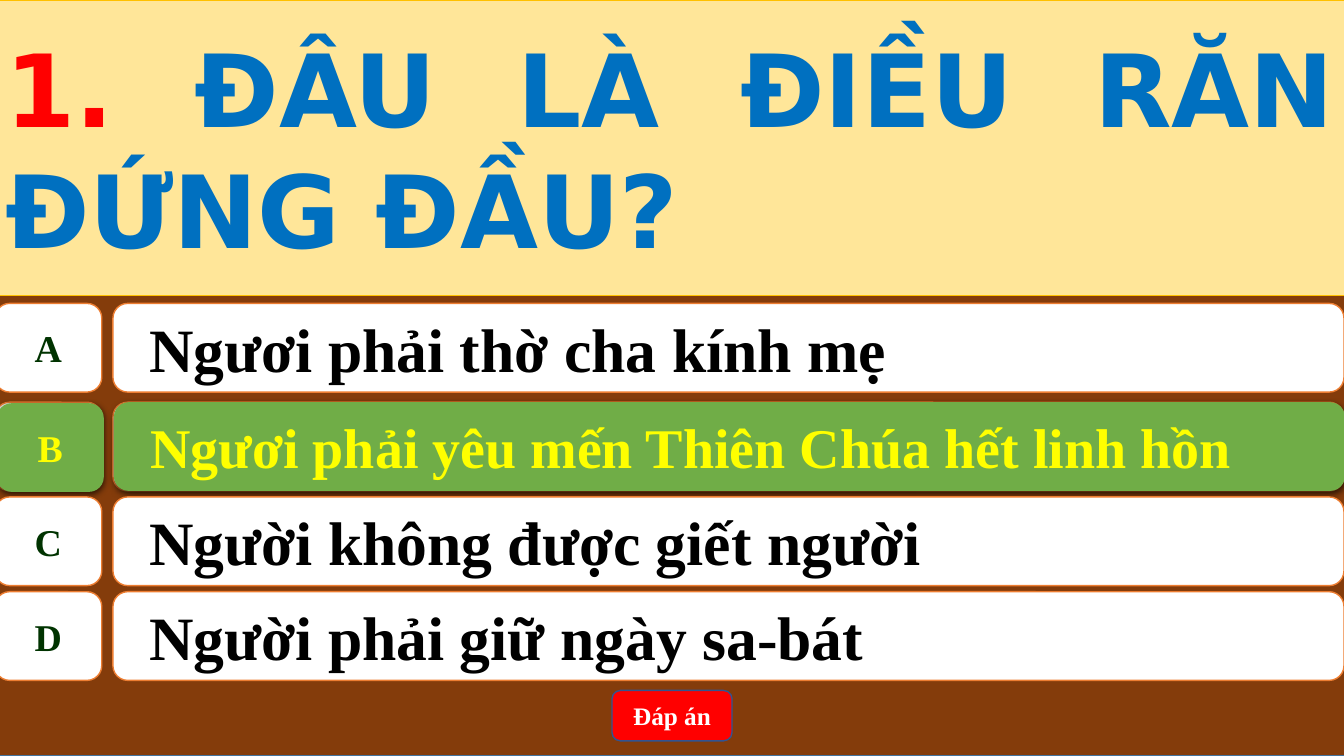
from dataclasses import dataclass

from lxml import etree
from pptx import Presentation
from pptx.dml.color import RGBColor
from pptx.enum import shapes, text
from pptx.oxml import ns
from pptx.util import Emu, Pt

PX = 9144  # 100 px to the inch

WHITE = RGBColor(0xFF, 0xFF, 0xFF)
BLACK = RGBColor(0, 0, 0)
BROWN = RGBColor(0x84, 0x3C, 0x0B)
STEEL = RGBColor(0x43, 0x73, 0x9E)
NAVY = RGBColor(0x32, 0x54, 0x91)
ORANGE = RGBColor(0xED, 0x7D, 0x31)
FOREST = RGBColor(0, 0x33, 0)
GREEN = RGBColor(0x70, 0xAD, 0x47)
YELLOW = RGBColor(0xFF, 0xFF, 0)
RED = RGBColor(0xFF, 0, 0)
BLUE = RGBColor(0, 0x70, 0xC0)
CREAM = RGBColor(0xFF, 0xE6, 0x99)
GOLD = RGBColor(0xFF, 0xC0, 0)

SERIF = "Times New Roman"
SANS = "DejaVu Sans"
KIND = shapes.MSO_SHAPE
ALIGN = text.PP_ALIGN


@dataclass
class Row:
    top: int
    mark: str
    words: str
    size: int = 44
    right: bool = False


ROWS = [
    Row(301, "A", "Ngươi phải thờ cha kính mẹ"),
    Row(399, "B", "Ngươi phải yêu mến Thiên Chúa hết linh hồn", 40, True),
    Row(493, "C", "Người không được giết người"),
    Row(587, "D", "Người phải giữ ngày sa-bát"),
]


def px(count: int) -> Emu:
    return Emu(count * PX)


def paint(shape, fill: RGBColor, line: RGBColor | None, width: float = 1) -> None:
    shape.fill.solid()
    shape.fill.fore_color.rgb = fill
    if line is None:
        shape.line.fill.background()
    else:
        shape.line.color.rgb = line
        shape.line.width = Pt(width)


def add_box(slide, kind, left: int, top: int, wide: int, high: int,
            fill: RGBColor, line: RGBColor | None):
    box = slide.shapes.add_shape(kind, px(left), px(top), px(wide), px(high))
    box.shadow.inherit = False
    paint(box, fill, line)
    box.text_frame.vertical_anchor = text.MSO_ANCHOR.MIDDLE
    return box


def add_run(para, words: str, size: int, color: RGBColor, face: str = SERIF) -> None:
    run = para.add_run()
    run.text = words
    run.font.size = Pt(size)
    run.font.name = face
    run.font.bold = True
    run.font.color.rgb = color


def add_shade(shape) -> None:
    list_ = shape._element.spPr.find(ns.qn("a:effectLst"))
    outer = etree.SubElement(list_, ns.qn("a:outerShdw"), blurRad=str(Pt(4.5)),
                             dist=str(Pt(1.5)), dir="5400000", rotWithShape="0")
    tint = etree.SubElement(outer, ns.qn("a:srgbClr"), val=str(BLACK))
    etree.SubElement(tint, ns.qn("a:alpha"), val="63000")


def add_pair(slide, top: int, shift: int, fill: RGBColor, line: RGBColor | None):
    mark = add_box(slide, KIND.FLOWCHART_ALTERNATE_PROCESS,
                   -5 + 2 * shift, top + shift, 106, 88, fill, line)
    bar = add_box(slide, KIND.ROUNDED_RECTANGLE,
                  112 + shift, top, 1221, 88, fill, line)
    return mark, bar


def add_row(slide, row: Row) -> None:
    mark, bar = add_pair(slide, row.top, 0, WHITE, ORANGE)
    if row.right:
        # The right answer lies over its white row, slightly shifted
        mark, bar = add_pair(slide, row.top, 1, GREEN, None)
        add_shade(mark)
        add_shade(bar)
    mark.text_frame.word_wrap = False
    para = mark.text_frame.paragraphs[0]
    para.alignment = ALIGN.CENTER
    add_run(para, row.mark, 27, YELLOW if row.right else FOREST)

    para = bar.text_frame.paragraphs[0]
    para.alignment = ALIGN.LEFT
    para.level = 1
    props = para._p.get_or_add_pPr()
    props.set("marL", str(px(50)))
    props.set("indent", str(px(-28)))
    add_run(para, row.words, row.size, YELLOW if row.right else BLACK)


def add_title(slide) -> None:
    title = slide.shapes.title
    title.left, title.top, title.width, title.height = map(px, (-5, 0, 1339, 293))
    paint(title, CREAM, GOLD, 0.5)
    frame = title.text_frame
    frame.word_wrap = True
    frame.auto_size = text.MSO_AUTO_SIZE.NONE
    frame.vertical_anchor = text.MSO_ANCHOR.MIDDLE
    para = frame.paragraphs[0]
    para.alignment = ALIGN.JUSTIFY
    add_run(para, "1. ", 72, RED, SANS)
    add_run(para, "ĐÂU LÀ ĐIỀU RĂN ĐỨNG ĐẦU?", 72, BLUE, SANS)
    # Bring the title in front of the brown board
    slide.shapes._spTree.append(title._element)


def main() -> None:
    deck = Presentation()
    deck.slide_width, deck.slide_height = px(1333), px(750)
    slide = deck.slides.add_slide(deck.slide_layouts[5])

    # Board
    add_box(slide, KIND.RECTANGLE, -5, 0, 1339, 750, BROWN, STEEL)

    # Answers
    for row in ROWS:
        add_row(slide, row)

    # Button
    key = add_box(slide, KIND.ROUNDED_RECTANGLE, 607, 685, 119, 50, RED, NAVY)
    para = key.text_frame.paragraphs[0]
    para.alignment = ALIGN.CENTER
    add_run(para, "Đáp án", 18, WHITE)

    # Question
    add_title(slide)
    deck.save("out.pptx")


if __name__ == "__main__":
    main()
